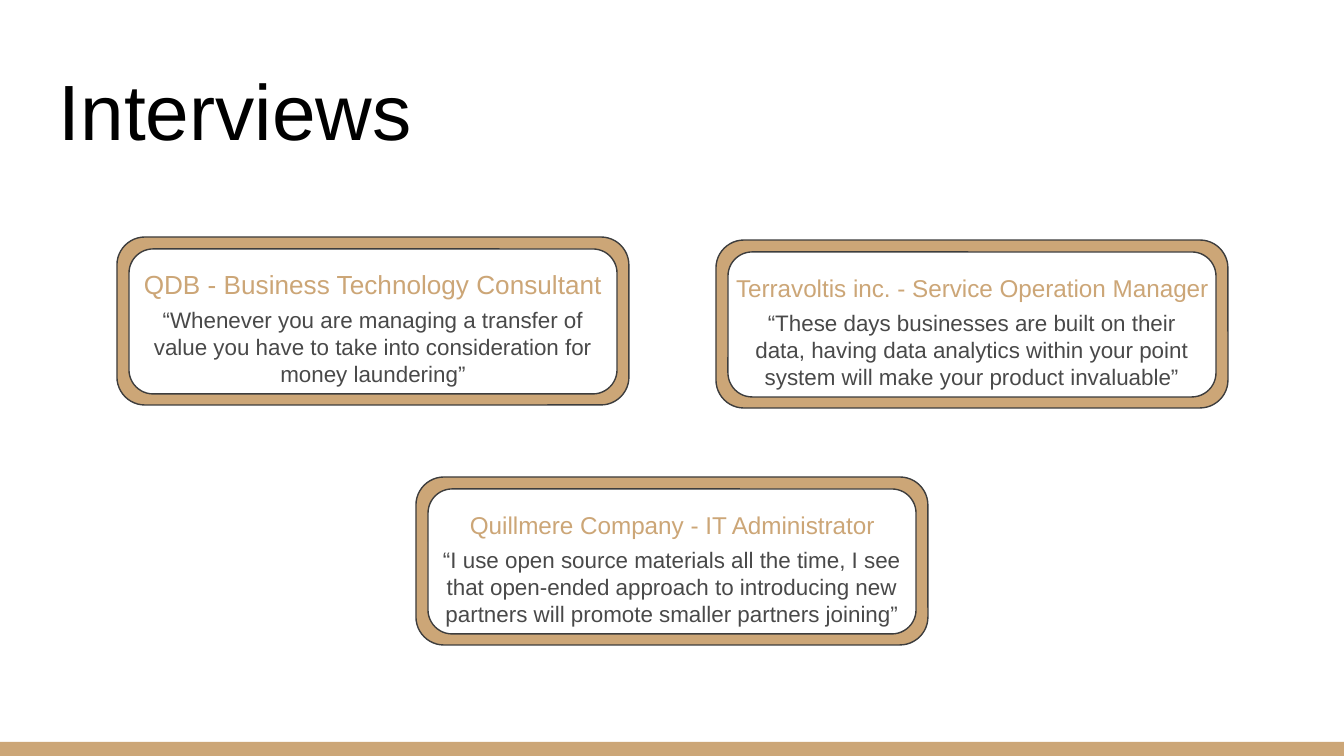
from dataclasses import dataclass

from pptx import Presentation
from pptx.dml.color import RGBColor
from pptx.enum.shapes import MSO_SHAPE
from pptx.enum.text import MSO_ANCHOR, PP_ALIGN
from pptx.util import Emu, Pt

PX = 914400 / 134.4


@dataclass(frozen=True)
class Theme:
    """Colours, font and type sizes of the slide."""
    font: str = "Arial"
    tan: str = "CCA677"
    white: str = "FFFFFF"
    outline: str = "3D3D3D"
    title: str = "000000"
    quote: str = "494949"
    title_pt: int = 42
    lead_pt: int = 14
    heading_pt: int = 13
    quote_pt: int = 12
    line_pt: float = 0.75


T = Theme()

INTERVIEWS = [
    (117, 237, "QDB - Business Technology Consultant", T.lead_pt,
     "“Whenever you are managing a transfer of value you have to take into "
     "consideration for money laundering”"),
    (716, 240, "Terravoltis inc. - Service Operation Manager", T.heading_pt,
     "“These days businesses are built on their data, having data analytics "
     "within your point system will make your product invaluable”"),
    (416, 477, "Quillmere Company - IT Administrator", T.heading_pt,
     "“I use open source materials all the time, I see that open-ended approach "
     "to introducing new partners will promote smaller partners joining”"),
]


def px(*lengths):
    """Turn pixel lengths into EMU."""
    return [Emu(round(n * PX)) for n in lengths]


def add_box(s, kind, box, fill, outline=None):
    """Add a filled preset shape, outlined if a colour is given."""
    sp = s.shapes.add_shape(kind, *px(*box))
    sp.shadow.inherit = False
    sp.fill.solid()
    sp.fill.fore_color.rgb = RGBColor.from_string(fill)
    if outline:
        sp.line.color.rgb = RGBColor.from_string(outline)
        sp.line.width = Pt(T.line_pt)
    else:
        sp.line.fill.background()


def add_text(s, box, text, size, color, align=PP_ALIGN.CENTER, anchor=MSO_ANCHOR.MIDDLE):
    """Add a wrapping text box with one paragraph."""
    tf = s.shapes.add_textbox(*px(*box)).text_frame
    tf.word_wrap = True
    tf.vertical_anchor = anchor
    tf.margin_left, tf.margin_top, tf.margin_right, tf.margin_bottom = px(13, 13, 13, 13)
    p = tf.paragraphs[0]
    p.text = text
    p.alignment = align
    font = p.runs[0].font
    font.name = T.font
    font.size = Pt(size)
    font.color.rgb = RGBColor.from_string(color)


def add_interview(s, x, y, heading, heading_pt, quote):
    """Add a framed card with a heading and a quote."""
    frame = (x, y, 512, 168)
    panel = (x + 12, y + 12, 488, 145)
    for box, fill in ((frame, T.tan), (panel, T.white)):
        add_box(s, MSO_SHAPE.ROUNDED_RECTANGLE, box, fill, T.outline)
    add_text(s, (x, y + 6, 512, 83), heading, heading_pt, T.tan)
    add_text(s, (x + 12, y + 75, 488, 69), quote, T.quote_pt, T.quote)


def main():
    """Build and save the slide."""
    prs = Presentation()
    prs.slide_width, prs.slide_height = px(1344, 756)
    s = prs.slides.add_slide(prs.slide_layouts[6])
    add_box(s, MSO_SHAPE.RECTANGLE, (0, 742, 1344, 14), T.tan)
    add_text(s, (46, 47, 414, 122), "Interviews", T.title_pt, T.title,
             PP_ALIGN.LEFT, MSO_ANCHOR.BOTTOM)
    for interview in INTERVIEWS:
        add_interview(s, *interview)
    prs.save("out.pptx")


if __name__ == "__main__":
    main()
